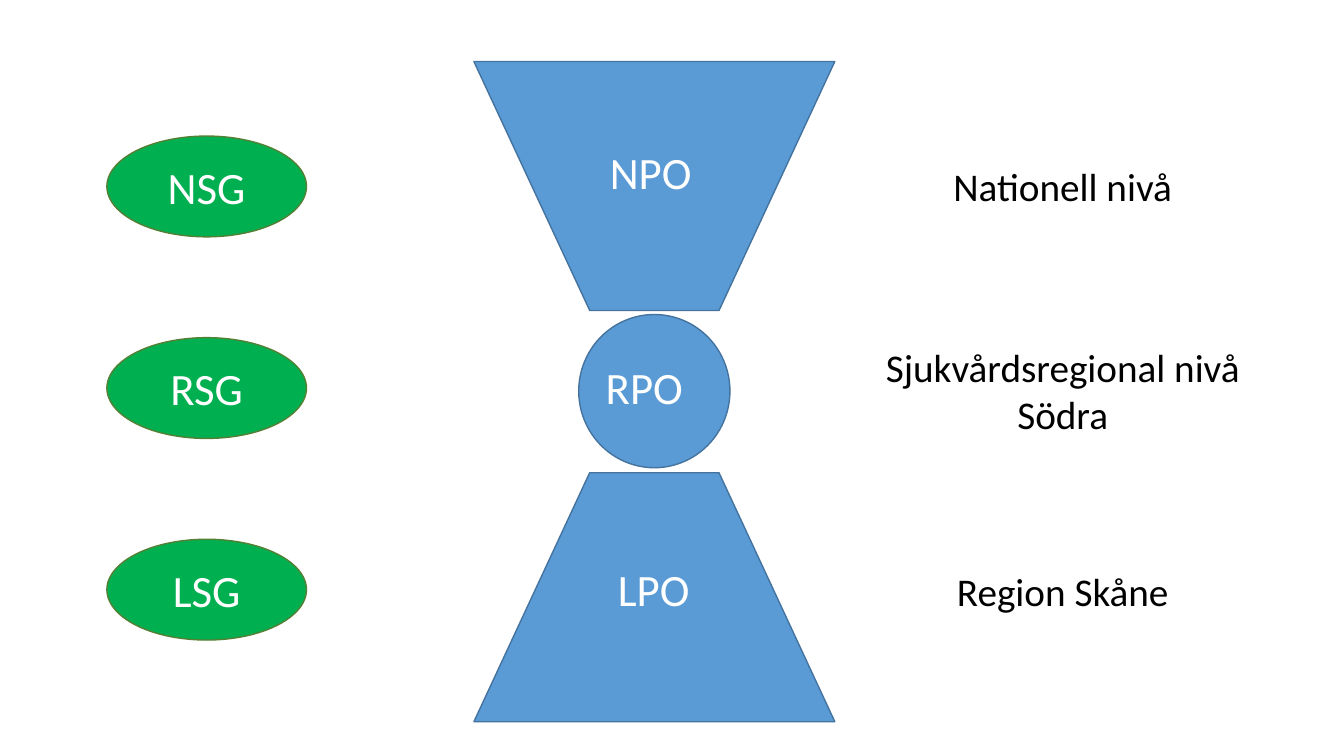
from pptx import Presentation
from pptx.dml.color import RGBColor
from pptx.enum.shapes import MSO_SHAPE
from pptx.enum.text import MSO_ANCHOR, PP_ALIGN
from pptx.util import Inches, Pt

WHITE = RGBColor(0xFF, 0xFF, 0xFF)
BLACK = RGBColor(0x00, 0x00, 0x00)
BLUE = RGBColor(0x5B, 0x9B, 0xD5)
DARK_BLUE = RGBColor(0x43, 0x73, 0x9E)
GREEN = RGBColor(0x00, 0xB0, 0x50)
DARK_GREEN = RGBColor(0x53, 0x80, 0x35)

LEVEL_CENTER = 10.54
GROUP_TOP = 1.35
GROUP_STEP = 2


def write_lines(frame, lines, size, color, align):
    for index, line in enumerate(lines):
        paragraph = frame.paragraphs[0] if index == 0 else frame.add_paragraph()
        paragraph.alignment = align
        run = paragraph.add_run()
        run.text = line
        run.font.name = "Calibri"
        run.font.size = Pt(size)
        run.font.color.rgb = color


def add_figure(slide, kind, box, fill, outline):
    figure = slide.shapes.add_shape(kind, *map(Inches, box))
    figure.shadow.inherit = False
    figure.fill.solid()
    figure.fill.fore_color.rgb = fill
    figure.line.color.rgb = outline
    figure.line.width = Pt(1)
    return figure


def add_cone(slide, top, rotation):
    cone = add_figure(slide, MSO_SHAPE.TRAPEZOID, (4.7, top, 3.58, 2.47), BLUE, DARK_BLUE)
    cone.adjustments[0] = 0.465
    cone.rotation = rotation


def add_label(slide, box, lines, size, color, align, wrap):
    label = slide.shapes.add_textbox(*map(Inches, box))
    label.text_frame.word_wrap = wrap
    write_lines(label.text_frame, lines, size, color, align)


def add_group(slide, top, name):
    group = add_figure(slide, MSO_SHAPE.OVAL, (1.06, top, 1.98, 1), GREEN, DARK_GREEN)
    group.text_frame.vertical_anchor = MSO_ANCHOR.MIDDLE
    write_lines(group.text_frame, [name], 32, WHITE, PP_ALIGN.CENTER)


def main():
    deck = Presentation()
    deck.slide_width = Inches(13.33)
    deck.slide_height = Inches(7.5)
    slide = deck.slides.add_slide(deck.slide_layouts[6])

    add_cone(slide, 4.69, 0)
    add_cone(slide, 0.61, 180)
    add_figure(slide, MSO_SHAPE.OVAL, (5.74, 3.12, 1.5, 1.52), BLUE, DARK_BLUE)

    for name, left, top, width in (
        ("NPO", 5.95, 1.39, 1.21),
        ("RPO", 5.91, 3.52, 1.23),
        ("LPO", 6.03, 5.52, 1.13),
    ):
        add_label(slide, (left, top, width, 0.64), [name], 32, WHITE, PP_ALIGN.LEFT, True)

    for lines, top, width, height in (
        (["Nationell nivå"], 1.56, 2.39, 0.57),
        (["Sjukvårdsregional nivå", "Södra"], 3.36, 3.75, 1.04),
        (["Region Skåne"], 5.58, 2.32, 0.57),
    ):
        box = (LEVEL_CENTER - width / 2, top, width, height)
        add_label(slide, box, lines, 28, BLACK, PP_ALIGN.CENTER, False)

    for row, name in enumerate(("NSG", "RSG", "LSG")):
        add_group(slide, GROUP_TOP + row * GROUP_STEP, name)

    deck.save("out.pptx")


if __name__ == "__main__":
    main()
